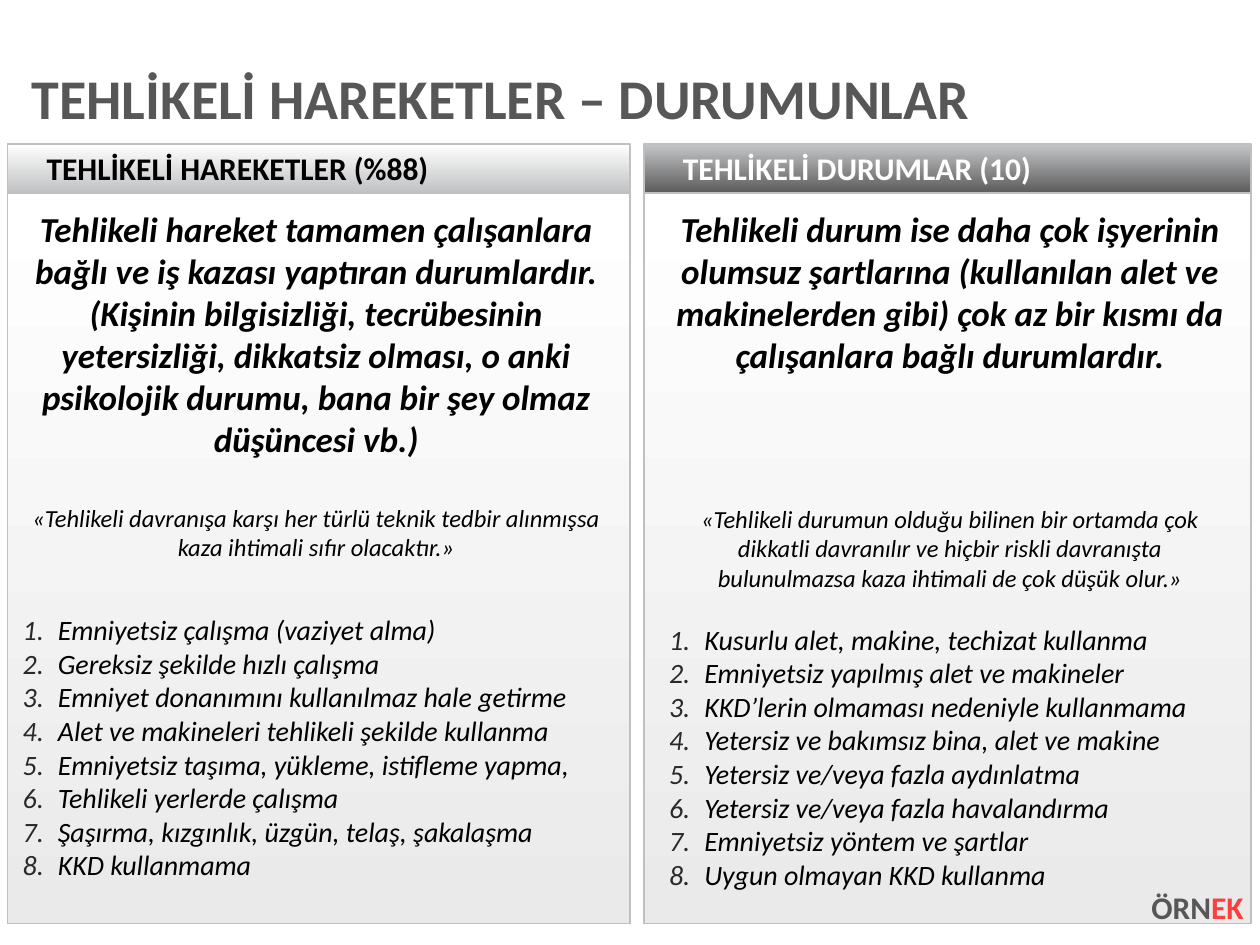
from lxml.etree import SubElement
from pptx import Presentation
from pptx.dml.color import RGBColor
from pptx.enum.shapes import MSO_SHAPE as Shape
from pptx.enum.text import MSO_ANCHOR as Anchor, MSO_AUTO_SIZE as AutoSize, PP_ALIGN as Align
from pptx.oxml.ns import qn
from pptx.util import Inches, Pt

FONT = "Calibri"
COLORS = {
    "black": "000000", "white": "FFFFFF", "gray": "575757", "red": "FB3E3E",
    "number": "292929", "border": "C0C0C0", "panel_end": "EAEAEA",
    "light_end": "C1C2C3", "dark_start": "C6C7C8", "dark_end": "5C5C5D",
}
HEADER_TOP, HEADER_HEIGHT, BODY_HEIGHT = 1.14, 0.39, 5.8
NUMBER_INDENT = 0.28

COLUMNS = [
    {
        "left": 0.06, "width": 4.94, "indent": 0,
        "header": "TEHLİKELİ HAREKETLER (%88)",
        "header_fill": ("white", "light_end"), "header_color": "black",
        "definition": "Tehlikeli hareket tamamen çalışanlara bağlı ve iş kazası yaptıran "
                      "durumlardır. (Kişinin bilgisizliği, tecrübesinin yetersizliği, "
                      "dikkatsiz olması, o anki psikolojik durumu, bana bir şey olmaz "
                      "düşüncesi vb.)",
        "quote": "«Tehlikeli davranışa karşı her türlü teknik tedbir alınmışsa kaza "
                 "ihtimali sıfır olacaktır.»",
        "quote_gap": 24.4, "list_gap": 29.3,
        "items": [
            "Emniyetsiz çalışma (vaziyet alma)",
            "Gereksiz şekilde hızlı çalışma",
            "Emniyet donanımını kullanılmaz hale getirme",
            "Alet ve makineleri tehlikeli şekilde kullanma",
            "Emniyetsiz taşıma, yükleme, istifleme yapma,",
            "Tehlikeli yerlerde çalışma",
            "Şaşırma, kızgınlık, üzgün, telaş, şakalaşma",
            "KKD kullanmama",
        ],
    },
    {
        "left": 5.11, "width": 4.82, "indent": 0.08,
        "header": "TEHLİKELİ DURUMLAR (10)",
        "header_fill": ("dark_start", "dark_end"), "header_color": "white",
        "definition": "Tehlikeli durum ise daha çok işyerinin olumsuz şartlarına "
                      "(kullanılan alet ve makinelerden gibi) çok az bir kısmı da "
                      "çalışanlara bağlı durumlardır.",
        "quote": "«Tehlikeli durumun olduğu bilinen bir ortamda çok dikkatli davranılır "
                 "ve hiçbir riskli davranışta bulunulmazsa kaza ihtimali de çok düşük olur.»",
        "quote_gap": 73.2, "list_gap": 17.1,
        "items": [
            "Kusurlu alet, makine, techizat kullanma",
            "Emniyetsiz yapılmış alet ve makineler",
            "KKD’lerin olmaması nedeniyle kullanmama",
            "Yetersiz ve bakımsız bina, alet ve makine",
            "Yetersiz ve/veya fazla aydınlatma",
            "Yetersiz ve/veya fazla havalandırma",
            "Emniyetsiz yöntem ve şartlar",
            "Uygun olmayan KKD kullanma",
        ],
    },
]


def rgb(name):
    return RGBColor.from_string(COLORS[name])


def set_frame(shape, insets, anchor=Anchor.TOP):
    frame = shape.text_frame
    frame.word_wrap = True
    frame.auto_size = AutoSize.NONE
    frame.vertical_anchor = anchor
    frame.margin_left, frame.margin_top, frame.margin_right, frame.margin_bottom = map(Inches, insets)
    return frame


def add_text(paragraph, text, size=18, color="black", bold=False, italic=False,
             align=Align.LEFT, gap=0, indent=0, numbered=False):
    paragraph.alignment = align
    properties = paragraph._p.get_or_add_pPr()
    hanging = NUMBER_INDENT if numbered else 0
    properties.set("marL", str(Inches(indent + hanging)))
    properties.set("indent", str(Inches(-hanging)))
    if numbered:
        bullet_color = SubElement(properties, qn("a:buClr"))
        SubElement(bullet_color, qn("a:srgbClr"), val=COLORS["number"])
        SubElement(properties, qn("a:buFont"), typeface=FONT)
        SubElement(properties, qn("a:buAutoNum"), type="arabicPeriod")
    if gap:
        paragraph.space_before = Pt(gap)
    run = paragraph.add_run()
    run.text = text
    font = run.font
    font.name, font.size, font.bold, font.italic = FONT, Pt(size), bold, italic
    font.color.rgb = rgb(color)


def add_panel(slide, left, top, width, height, fill):
    panel = slide.shapes.add_shape(Shape.RECTANGLE, *map(Inches, (left, top, width, height)))
    panel.shadow.inherit = False
    panel.fill.gradient()
    panel.fill.gradient_angle = 270
    for stop, color in zip(panel.fill.gradient_stops, fill):
        stop.color.rgb = rgb(color)
    panel.line.color.rgb = rgb("border")
    panel.line.width = Pt(1)
    return panel


def add_column(slide, column):
    left, width, indent = column["left"], column["width"], column["indent"]
    header = add_panel(slide, left, HEADER_TOP, width, HEADER_HEIGHT, column["header_fill"])
    header_frame = set_frame(header, (0.31, 0, 0, 0), Anchor.MIDDLE)
    add_text(header_frame.paragraphs[0], column["header"], color=column["header_color"], bold=True)

    body = add_panel(slide, left, HEADER_TOP + HEADER_HEIGHT, width, BODY_HEIGHT,
                     ("white", "panel_end"))
    frame = set_frame(body, (0.12, 0.12, 0.16, 0.08))
    add_text(frame.paragraphs[0], column["definition"], size=20, bold=True, italic=True,
             align=Align.CENTER, indent=indent)
    add_text(frame.add_paragraph(), column["quote"], size=14, italic=True,
             align=Align.CENTER, gap=column["quote_gap"], indent=indent)
    for index, item in enumerate(column["items"]):
        add_text(frame.add_paragraph(), item, size=16, italic=True, numbered=True,
                 gap=0 if index else column["list_gap"], indent=indent)


def add_title(slide, text):
    title = slide.shapes.title
    title.left, title.top, title.width, title.height = map(Inches, (0.25, 0.45, 9.64, 0.71))
    heading = set_frame(title, (0, 0.05, 0, 0.05), Anchor.MIDDLE).paragraphs[0]
    heading.line_spacing = 0.9
    add_text(heading, text, size=32, color="gray", bold=True)


def add_signature(slide, parts):
    signature = slide.shapes.add_textbox(*map(Inches, (9.12, 7.05, 0.75, 0.4)))
    paragraph = set_frame(signature, (0, 0, 0, 0)).paragraphs[0]
    for text, color in parts:
        add_text(paragraph, text, color=color, bold=True, align=Align.RIGHT)


def main():
    deck = Presentation()
    deck.slide_width, deck.slide_height = Inches(10), Inches(7.5)
    slide = deck.slides.add_slide(deck.slide_layouts[5])
    add_title(slide, "TEHLİKELİ HAREKETLER – DURUMUNLAR")
    for column in COLUMNS:
        add_column(slide, column)
    add_signature(slide, [("ÖRN", "gray"), ("EK", "red")])
    deck.save("out.pptx")


if __name__ == "__main__":
    main()
